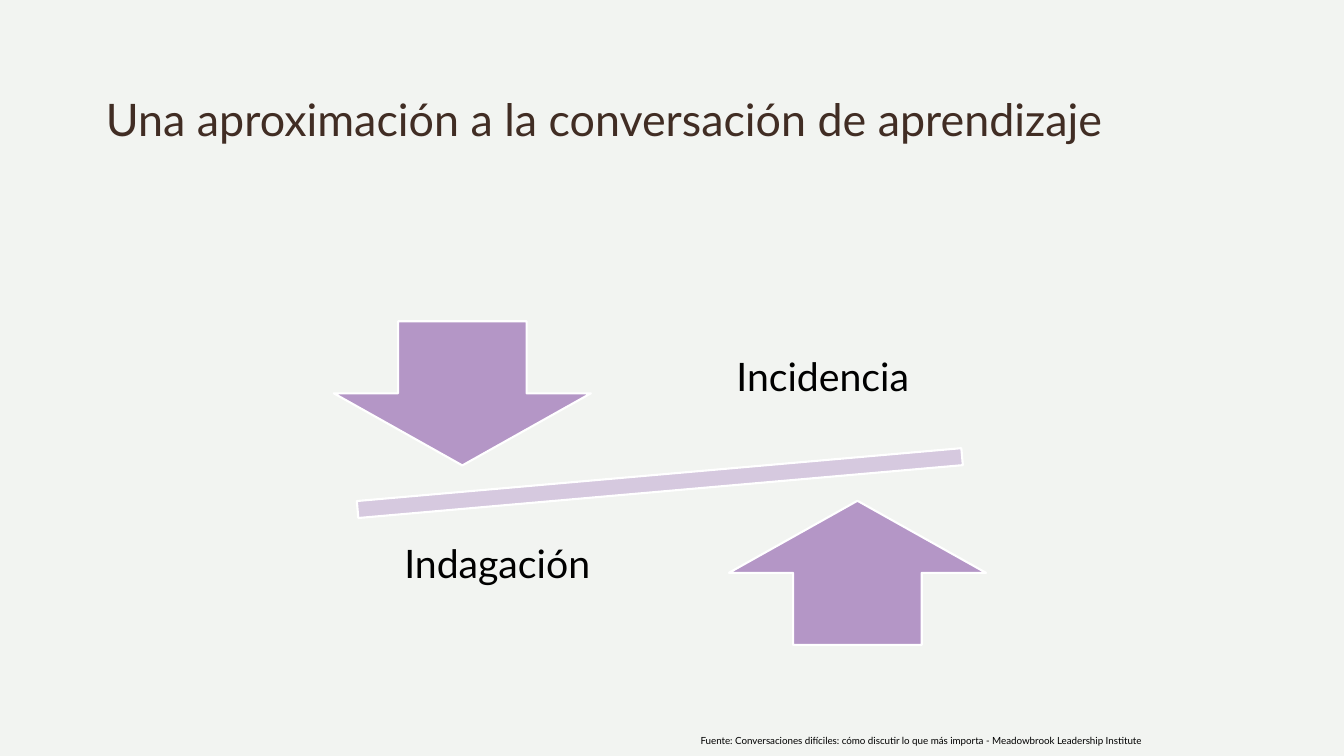
from pptx import Presentation
from pptx.dml.color import RGBColor
from pptx.enum.shapes import MSO_SHAPE as Kind
from pptx.enum.text import MSO_ANCHOR as Anchor, MSO_AUTO_SIZE as Fit, PP_ALIGN as Align
from pptx.util import Inches, Pt


def tint(code):
    return RGBColor.from_string(code)


def style(target, values):
    for name, value in values.items():
        setattr(target, name, value)


class Board:
    """Places elements on a grid of 100 columns by 100 rows."""
    font = "Lato"
    back, dark, ink = "F2F4F1", "412D24", "000000"
    edge, beam, arrow = "FFFFFF", "D6C9DF", "B496C6"

    def __init__(self, deck):
        self.col, self.row = deck.slide_width / 100, deck.slide_height / 100
        self.slide = deck.slides.add_slide(deck.slide_layouts[5])
        fill = self.slide.background.fill
        fill.solid()
        fill.fore_color.rgb = tint(self.back)

    def box(self, x, y, w, h):
        return (round(x * self.col), round(y * self.row),
                round(w * self.col), round(h * self.row))

    def mid(self, x, y, w, h):
        """Turns a centre point and a size into a box."""
        return x - w / 2, y - h / 2, w, h

    def label(self, shape, text, size, color, frame, para):
        body = shape.text_frame
        body.text = text
        style(body, {"word_wrap": True, "auto_size": Fit.NONE, **frame})
        line = body.paragraphs[0]
        style(line, para)
        style(line.font, {"name": self.font, "size": Pt(size)})
        line.font.color.rgb = tint(color)

    def title(self, text, area, **frame):
        shape = self.slide.shapes.title
        style(shape, dict(zip(("left", "top", "width", "height"), self.box(*area))))
        self.label(shape, text, 32, self.dark, frame, {"alignment": Align.LEFT})

    def text(self, text, area, size, frame, para):
        shape = self.slide.shapes.add_textbox(*self.box(*area))
        self.label(shape, text, size, self.ink, frame, para)

    def shape(self, kind, area, color, turn=0):
        shape = self.slide.shapes.add_shape(kind, *self.box(*area))
        shape.rotation = turn
        shape.shadow.inherit = False
        shape.fill.solid()
        shape.fill.fore_color.rgb = tint(color)
        shape.line.color.rgb = tint(self.edge)
        shape.line.width = Pt(1.5)


def main():
    deck = Presentation()
    style(deck, {"slide_width": Inches(13.33), "slide_height": Inches(7.5)})
    board = Board(deck)

    # Title
    board.title("Una aproximación a la conversación de aprendizaje",
                (7.13, 8.53, 85.75, 18.4),
                vertical_anchor=Anchor.BOTTOM, margin_bottom=Inches(0.58))

    # Beam of the balance
    cx, cy = 49.1, 63.9
    board.shape(Kind.MATH_MINUS, board.mid(cx, cy, 61.44, 9.6), board.beam, 355)

    # Arrows and labels, mirrored through the centre of the beam
    pad = Inches(0.22)
    sides = ((-1, Kind.DOWN_ARROW, "Incidencia", pad),
             (1, Kind.UP_ARROW, "Indagación", Inches(0.64)))
    for side, kind, word, foot in sides:
        board.shape(kind, board.mid(cx + side * 14.7, cy + side * 11.87, 19.13, 19.07),
                    board.arrow)
        frame = {"vertical_anchor": Anchor.MIDDLE, "margin_left": pad,
                 "margin_right": pad, "margin_top": pad, "margin_bottom": foot}
        board.text(word, board.mid(cx - side * 12.11, cy + side * 13.8, 20.4, 20), 28,
                   frame, {"alignment": Align.CENTER, "line_spacing": 0.9})

    # Source line
    board.text("Fuente: Conversaciones difíciles: cómo discutir lo que más importa"
               " - Meadowbrook Leadership Institute",
               (14.4, 96.53, 71.27, 2.93), 7,
               {"auto_size": Fit.SHAPE_TO_FIT_TEXT}, {"alignment": Align.RIGHT})

    deck.save("out.pptx")


if __name__ == "__main__":
    main()
